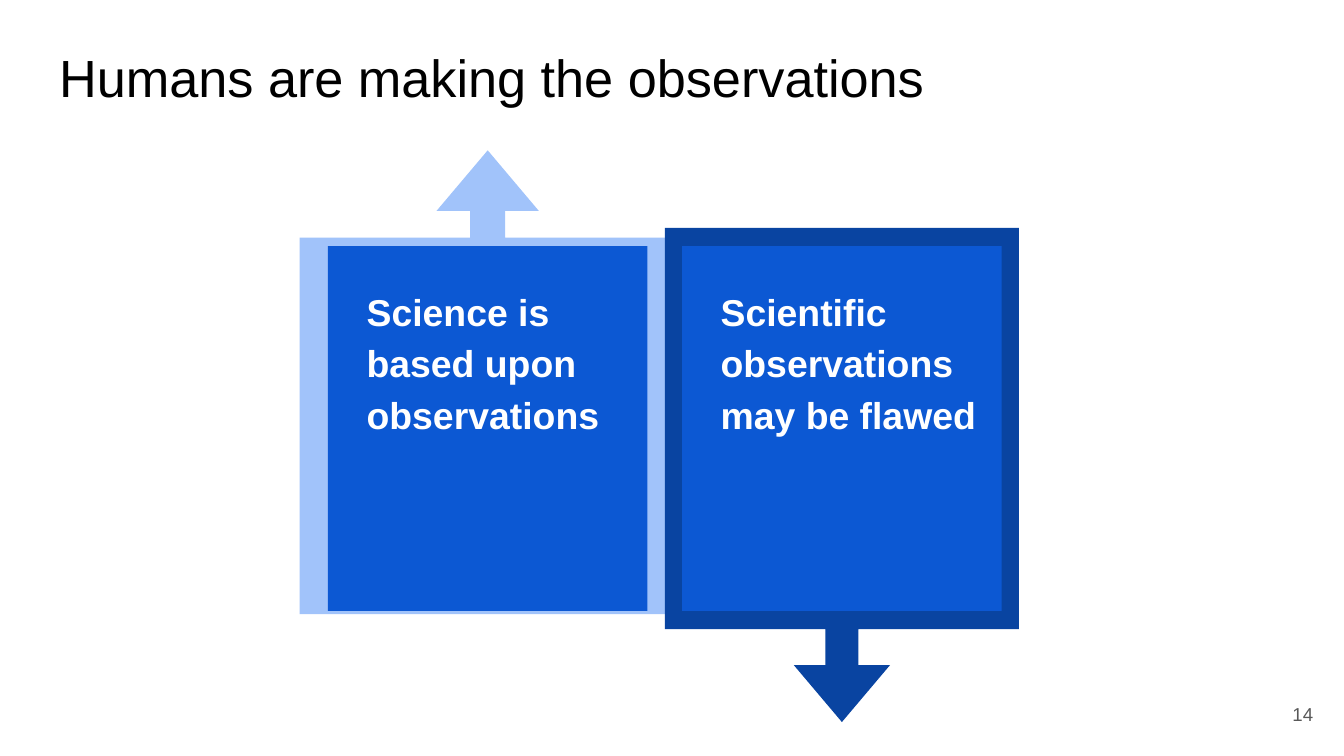
from pptx import Presentation
from pptx.dml.color import RGBColor
from pptx.enum import shapes, text
from pptx.util import Pt

HUES = {"black": "000000", "white": "FFFFFF", "gray": "595959",
        "pale": "A1C3FA", "mid": "0C58D3", "dark": "0944A1"}
TITLE = "Humans are making the observations"
PAGE = "14"
CARDS = [
    {"text": "Science is based upon observations", "hue": "pale", "turn": 270,
     "size": (248.5, 201.6), "mid": 204.8, "wide": 143},
    {"text": "Scientific observations may be flawed", "hue": "dark", "turn": 90,
     "size": (264.7, 189.6), "mid": 254.5, "wide": 158},
]
LEFT, TOP, WIDE, HIGH = 175.7, 131.8, 171.2, 195.5
STEP = 189.7
INSET = 13.6
ADJUST = (0.093, 0.136, 0.161, 0.812)


def color(name):
    return RGBColor.from_string(HUES[name])


def place(shape, x, y, w, h):
    shape.left, shape.top, shape.width, shape.height = map(Pt, (x, y, w, h))


def write(shape, words, size, hue, bold=False, align=text.PP_ALIGN.LEFT,
          anchor=text.MSO_ANCHOR.TOP, spacing=1):
    frame = shape.text_frame
    frame.word_wrap = True
    frame.auto_size = text.MSO_AUTO_SIZE.NONE
    frame.vertical_anchor = anchor
    frame.margin_left = frame.margin_right = Pt(7.2)
    frame.margin_top = frame.margin_bottom = Pt(7.2)
    para = frame.paragraphs[0]
    para.alignment, para.line_spacing = align, spacing
    run = para.add_run()
    run.text = words
    font = run.font
    font.name, font.size, font.bold = "Arial", Pt(size), bold
    font.color.rgb = color(hue)


def draw(slide, kind, box, hue):
    shape = slide.shapes.add_shape(kind, *map(Pt, box))
    shape.shadow.inherit = False
    shape.fill.solid()
    shape.fill.fore_color.rgb = color(hue)
    shape.line.fill.background()
    return shape


def add_card(slide, card, x):
    """Draw a turned arrow callout, with a panel and its label on top."""
    w, h = card["size"]
    box = (x + WIDE / 2 - w / 2, card["mid"] - h / 2, w, h)
    arrow = draw(slide, shapes.MSO_SHAPE.RIGHT_ARROW_CALLOUT, box, card["hue"])
    for i, value in enumerate(ADJUST):
        arrow.adjustments[i] = value
    arrow.rotation = card["turn"]
    draw(slide, shapes.MSO_SHAPE.RECTANGLE, (x, TOP, WIDE, HIGH), "mid")
    label = slide.shapes.add_textbox(
        *map(Pt, (x + INSET, 144, card["wide"], 163)))
    write(label, card["text"], 20, "white", bold=True, spacing=1.15)


def main():
    deck = Presentation()
    deck.slide_width, deck.slide_height = Pt(720), Pt(405)
    slide = deck.slides.add_slide(deck.slide_layouts[5])
    title = slide.shapes.title
    place(title, 24.5, 17.3, 671, 45.4)
    write(title, TITLE, 28, "black")
    for i, card in enumerate(CARDS):
        add_card(slide, card, LEFT + i * STEP)
    number = slide.shapes.add_textbox(*map(Pt, (667.4, 367.2, 43.2, 31)))
    write(number, PAGE, 10, "gray", align=text.PP_ALIGN.RIGHT,
          anchor=text.MSO_ANCHOR.MIDDLE)
    deck.save("out.pptx")


if __name__ == "__main__":
    main()
